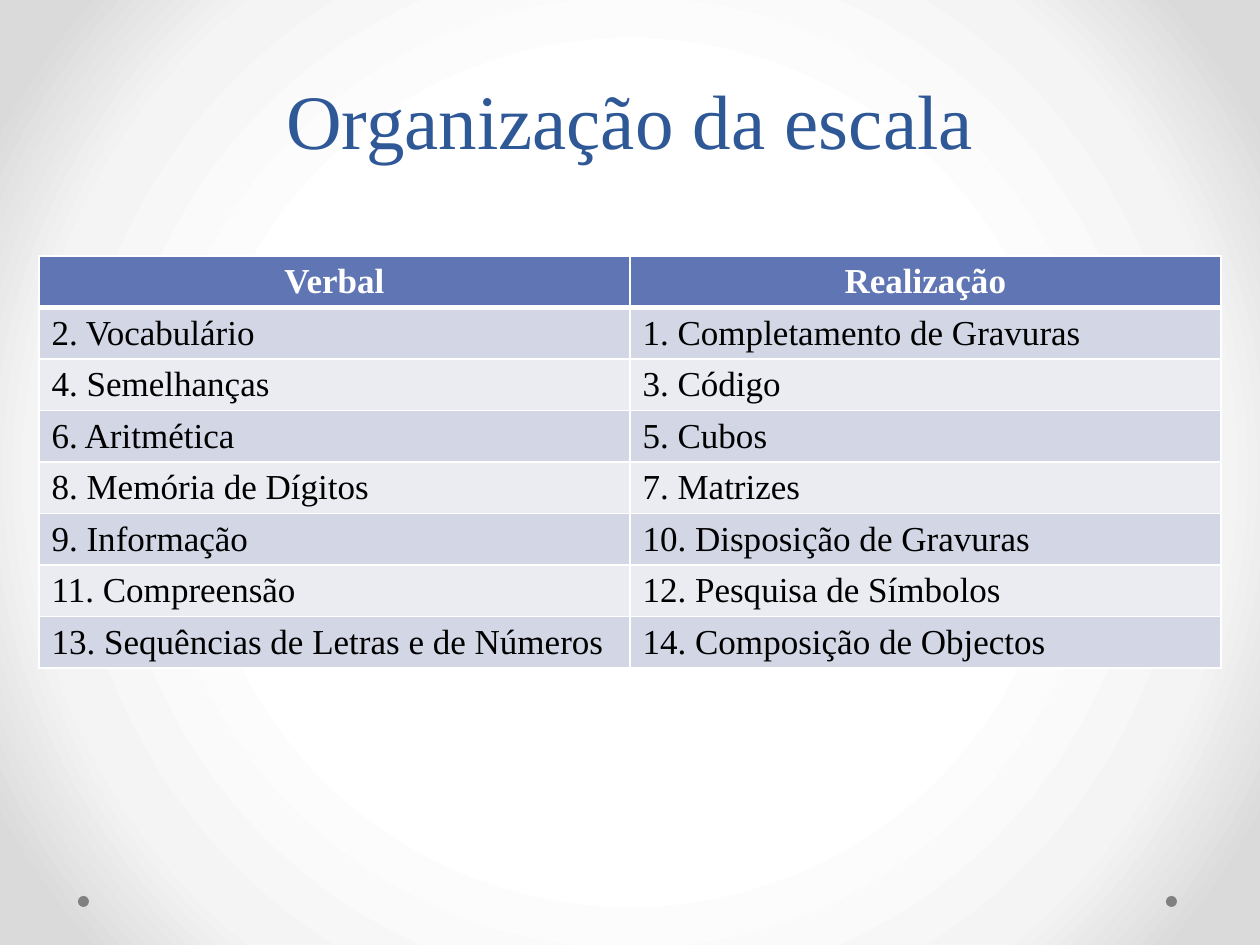
from pptx import Presentation
from pptx.dml.color import RGBColor
from pptx.enum.shapes import MSO_SHAPE
from pptx.enum.text import MSO_ANCHOR, PP_ALIGN
from pptx.oxml import parse_xml
from pptx.oxml.ns import nsdecls, qn
from pptx.util import Emu, Pt

FONT = "Times New Roman"
WHITE = "FFFFFF"
BANDS = ("D2D6E5", "EAECF2")
ROWS = [
    ("Verbal", "Realização"),
    ("2. Vocabulário", "1. Completamento de Gravuras"),
    ("4. Semelhanças", "3. Código"),
    ("6. Aritmética", "5. Cubos"),
    ("8. Memória de Dígitos", "7. Matrizes"),
    ("9. Informação", "10. Disposição de Gravuras"),
    ("11. Compreensão", "12. Pesquisa de Símbolos"),
    ("13. Sequências de Letras e de Números", "14. Composição de Objectos"),
]


def px(length):
    return Emu(round(length * 914400 / 126))


def color(hex_value):
    return RGBColor.from_string(hex_value)


def write_text(frame, text, size=20, fill="000000", bold=False,
               align=PP_ALIGN.LEFT, line_spacing=None):
    paragraph = frame.paragraphs[0]
    paragraph.alignment = align
    if line_spacing:
        paragraph.line_spacing = Pt(line_spacing)
    run = paragraph.add_run()
    run.text = text
    run.font.name = FONT
    run.font.size = Pt(size)
    run.font.bold = bold
    run.font.color.rgb = color(fill)


def set_background(slide, stops):
    """Fill the background with a circular gradient from the centre."""
    slide.background.fill.solid()
    properties = slide.element.cSld.find(qn("p:bg")).find(qn("p:bgPr"))
    stop_xml = "".join(
        f'<a:gs pos="{position * 1000}"><a:srgbClr val="{value}"/></a:gs>'
        for position, value in stops)
    gradient = parse_xml(
        f'<a:gradFill rotWithShape="1" {nsdecls("a")}><a:gsLst>{stop_xml}</a:gsLst>'
        '<a:path path="circle"><a:fillToRect l="50000" t="50000" r="50000" b="50000"/>'
        '</a:path></a:gradFill>')
    properties.replace(properties.find(qn("a:solidFill")), gradient)


def add_dot(slide, left, top, size):
    dot = slide.shapes.add_shape(MSO_SHAPE.OVAL, px(left), px(top), px(size), px(size))
    dot.shadow.inherit = False
    dot.fill.solid()
    dot.fill.fore_color.rgb = color("808080")
    dot.line.fill.background()


def format_title(slide, text):
    title = slide.shapes.title
    title.left, title.top, title.width, title.height = map(px, (0, -49, 1260, 220))
    title.text_frame.word_wrap = True
    title.text_frame.vertical_anchor = MSO_ANCHOR.BOTTOM
    write_text(title.text_frame, text, size=44, fill="2F5897",
               align=PP_ALIGN.CENTER, line_spacing=58)


def set_borders(cell, bottom_width):
    """Draw white cell borders; they must precede the fill in the XML."""
    properties = cell._tc.get_or_add_tcPr()
    widths = {"lnL": 1, "lnR": 1, "lnT": 1, "lnB": bottom_width}
    for index, (tag, width) in enumerate(widths.items()):
        properties.insert(index, parse_xml(
            f'<a:{tag} w="{Pt(width)}" {nsdecls("a")}><a:solidFill>'
            f'<a:srgbClr val="{WHITE}"/></a:solidFill></a:{tag}>'))


def add_scale_table(slide, left, top, width, row_height):
    frame = slide.shapes.add_table(len(ROWS), len(ROWS[0]), px(left), px(top),
                                   px(width), px(row_height * len(ROWS)))
    table = frame.table
    for row_index, texts in enumerate(ROWS):
        header = row_index == 0
        for column_index, text in enumerate(texts):
            cell = table.cell(row_index, column_index)
            cell.fill.solid()
            cell.fill.fore_color.rgb = color(
                "6076B4" if header else BANDS[(row_index - 1) % 2])
            set_borders(cell, bottom_width=3 if header else 1)
            if header:
                write_text(cell.text_frame, text, fill=WHITE, bold=True,
                           align=PP_ALIGN.CENTER)
            else:
                write_text(cell.text_frame, text)


def main():
    presentation = Presentation()
    presentation.slide_width, presentation.slide_height = px(1260), px(945)
    slide = presentation.slides.add_slide(presentation.slide_layouts[5])
    set_background(slide, [(50, WHITE), (76, "F4F4F4"), (92, "DADADA")])
    for left in (1166, 78):
        add_dot(slide, left, top=896, size=11)
    format_title(slide, "Organização da escala")
    add_scale_table(slide, left=39, top=256, width=1182, row_height=51)
    presentation.save("out.pptx")


if __name__ == "__main__":
    main()
